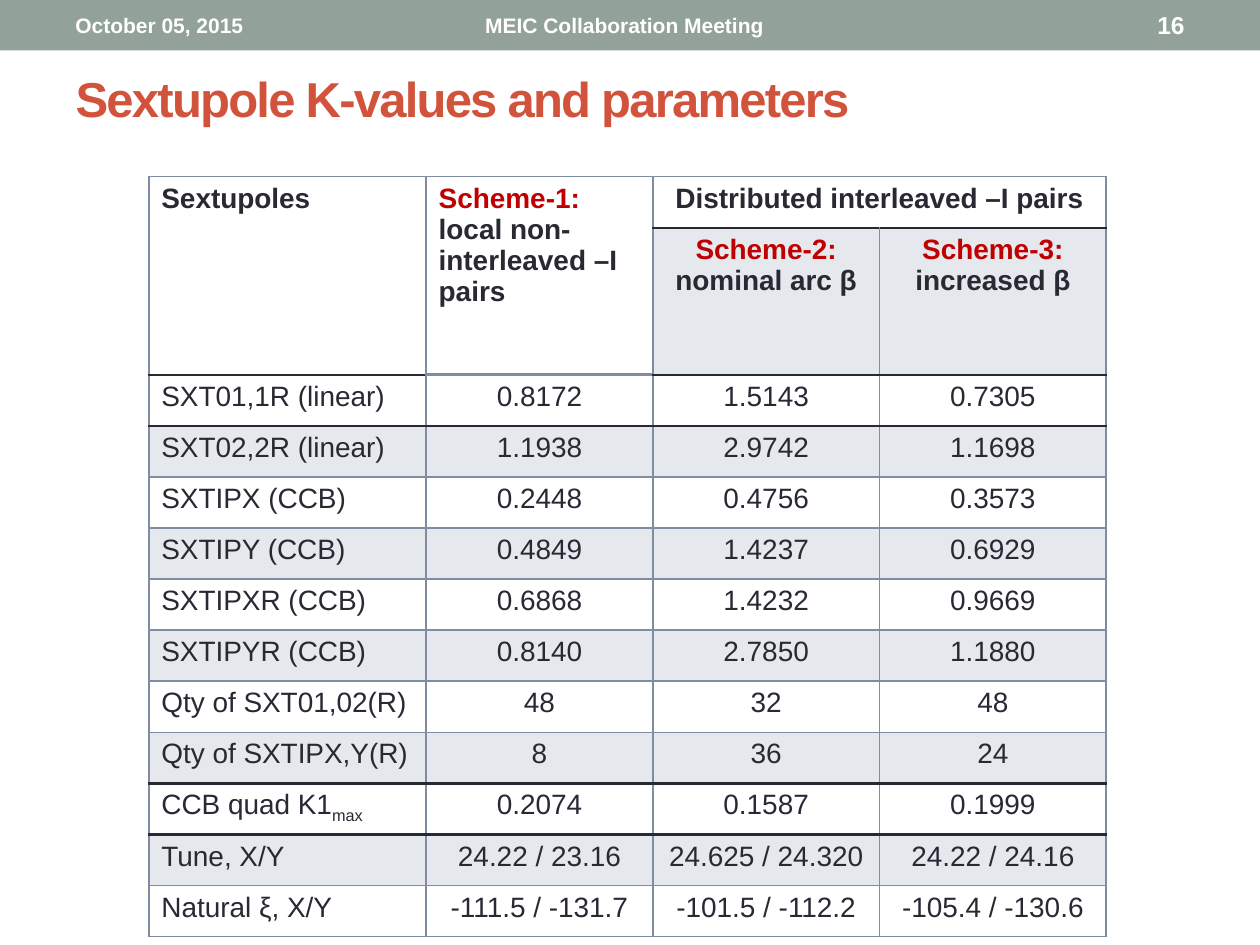
from pptx import Presentation, util as u
from pptx.dml import color
from pptx.enum import shapes, text
from pptx.oxml import ns
from lxml import etree

Cm, Pt = u.Cm, u.Pt
INK, GREY, RED, WHITE = "292934", "808DA0", "C00000", "FFFFFF"
LEFT, MID, RIGHT = text.PP_ALIGN.LEFT, text.PP_ALIGN.CENTER, text.PP_ALIGN.RIGHT
DARK = {1, 2, 9, 10}
HEADS = [
    (0, 0, LEFT, [("Sextupoles", INK)]),
    (0, 1, LEFT, [("Scheme-1:", RED), (" local non-interleaved –I pairs", INK)]),
    (0, 2, MID, [("Distributed interleaved –I pairs", INK)]),
    (1, 2, MID, [("Scheme-2:", RED), (" nominal arc β", INK)]),
    (1, 3, MID, [("Scheme-3:", RED), (" increased β", INK)]),
]
ROWS = [
    ("SXT01,1R (linear)", "0.8172", "1.5143", "0.7305"),
    ("SXT02,2R (linear)", "1.1938", "2.9742", "1.1698"),
    ("SXTIPX (CCB)", "0.2448", "0.4756", "0.3573"),
    ("SXTIPY (CCB)", "0.4849", "1.4237", "0.6929"),
    ("SXTIPXR (CCB)", "0.6868", "1.4232", "0.9669"),
    ("SXTIPYR (CCB)", "0.8140", "2.7850", "1.1880"),
    ("Qty of SXT01,02(R)", "48", "32", "48"),
    ("Qty of SXTIPX,Y(R)", "8", "36", "24"),
    ("CCB quad K1", "0.2074", "0.1587", "0.1999"),
    ("Tune, X/Y", "24.22 / 23.16", "24.625 / 24.320", "24.22 / 24.16"),
    ("Natural ξ, X/Y", "-111.5 / -131.7", "-101.5 / -112.2", "-105.4 / -130.6"),
]


def rgb(code):
    return color.RGBColor.from_string(code)


def add_run(para, words, size, tint, bold=True):
    run = para.add_run()
    run.text = words
    font = run.font
    font.name, font.size, font.bold = "Arial", Pt(size), bold
    font.color.rgb = rgb(tint)
    return run


def add_bar(slide, width):
    bar = slide.shapes.add_shape(shapes.MSO_SHAPE.RECTANGLE, 0, 0, width, Cm(1.02))
    bar.shadow.inherit = False
    bar.fill.solid()
    bar.fill.fore_color.rgb = rgb("93A299")
    bar.line.fill.background()


def set_title(slide, words):
    title = slide.shapes.title
    title.left, title.top, title.width, title.height = Cm(1.27), Cm(1.02), Cm(22.86), Cm(1.9)
    frame = title.text_frame
    frame.auto_size = text.MSO_AUTO_SIZE.NONE
    frame.vertical_anchor = text.MSO_ANCHOR.MIDDLE
    para = frame.paragraphs[0]
    para.alignment = LEFT
    run = add_run(para, words, 28, "D2533C")
    run.font._element.set("spc", "-100")


def add_label(slide, words, left, width, size, align):
    box = slide.shapes.add_textbox(Cm(left), Cm(0.05), Cm(width), Cm(0.91))
    frame = box.text_frame
    frame.word_wrap = True
    frame.vertical_anchor = text.MSO_ANCHOR.MIDDLE
    para = frame.paragraphs[0]
    para.alignment = align
    add_run(para, words, size, WHITE)


def edge(row, col):
    if row == 1 and col == 1:
        return GREY, 2
    if row in DARK or (row == 0 and col > 1):
        return INK, 1.5
    return GREY, 1


def add_edge(cell, side, tint, size):
    props = cell._tc.get_or_add_tcPr()
    line = etree.SubElement(props, ns.qn("a:ln" + side), w=str(Pt(size)))
    fill = etree.SubElement(line, ns.qn("a:solidFill"))
    etree.SubElement(fill, ns.qn("a:srgbClr"), val=tint)


def style_cell(cell, row, col):
    last = 1 if row == 0 and col < 2 else row
    for side in "LR":
        add_edge(cell, side, GREY, 1)
    add_edge(cell, "T", *edge(row - 1, col))
    add_edge(cell, "B", *edge(last, col))
    if row % 2 and (row > 1 or col > 1):
        cell.fill.solid()
        cell.fill.fore_color.rgb = rgb(GREY)
        tone = cell._tc.tcPr.find(".//" + ns.qn("a:srgbClr") + "[last()]")
        tone = cell._tc.tcPr.find(ns.qn("a:solidFill")).find(ns.qn("a:srgbClr"))
        etree.SubElement(tone, ns.qn("a:alpha"), val="20000")
    else:
        cell.fill.background()


def add_grid(slide):
    count = len(ROWS) + 2
    frame = slide.shapes.add_table(count, 4, Cm(3), Cm(3.56), Cm(19.3), Cm(15.12))
    grid = frame.table
    grid.first_row = grid.horz_banding = False
    for col, width in zip(grid.columns, (5.59, 4.57, 4.57, 4.57)):
        col.width = Cm(width)
    for row, line in enumerate(grid.rows):
        line.height = Cm(2.76 if row == 1 else 1.03)
        for col in range(4):
            style_cell(grid.cell(row, col), row, col)
    for col in range(2):
        grid.cell(0, col).merge(grid.cell(1, col))
    grid.cell(0, 2).merge(grid.cell(0, 3))
    for row, col, align, parts in HEADS:
        para = grid.cell(row, col).text_frame.paragraphs[0]
        para.alignment = align
        for words, tint in parts:
            add_run(para, words, 16, tint)
    for row, items in enumerate(ROWS, 2):
        for col, words in enumerate(items):
            para = grid.cell(row, col).text_frame.paragraphs[0]
            para.alignment = MID if col else LEFT
            add_run(para, words, 16, INK, False)
            if words == "CCB quad K1":
                sub = add_run(para, "max", 16, INK, False)
                sub.font._element.set("baseline", "-25000")


def main():
    deck = Presentation()
    deck.slide_width, deck.slide_height = Cm(25.4), Cm(19.05)
    slide = deck.slides.add_slide(deck.slide_layouts[5])
    add_bar(slide, deck.slide_width)
    set_title(slide, "Sextupole K-values and parameters")
    add_label(slide, "October 05, 2015", 1.27, 8.05, 12, LEFT)
    add_label(slide, "MEIC Collaboration Meeting", 9.53, 11.43, 12, LEFT)
    add_label(slide, "16", 21.16, 2.97, 14, RIGHT)
    add_grid(slide)
    deck.save("out.pptx")


if __name__ == "__main__":
    main()
